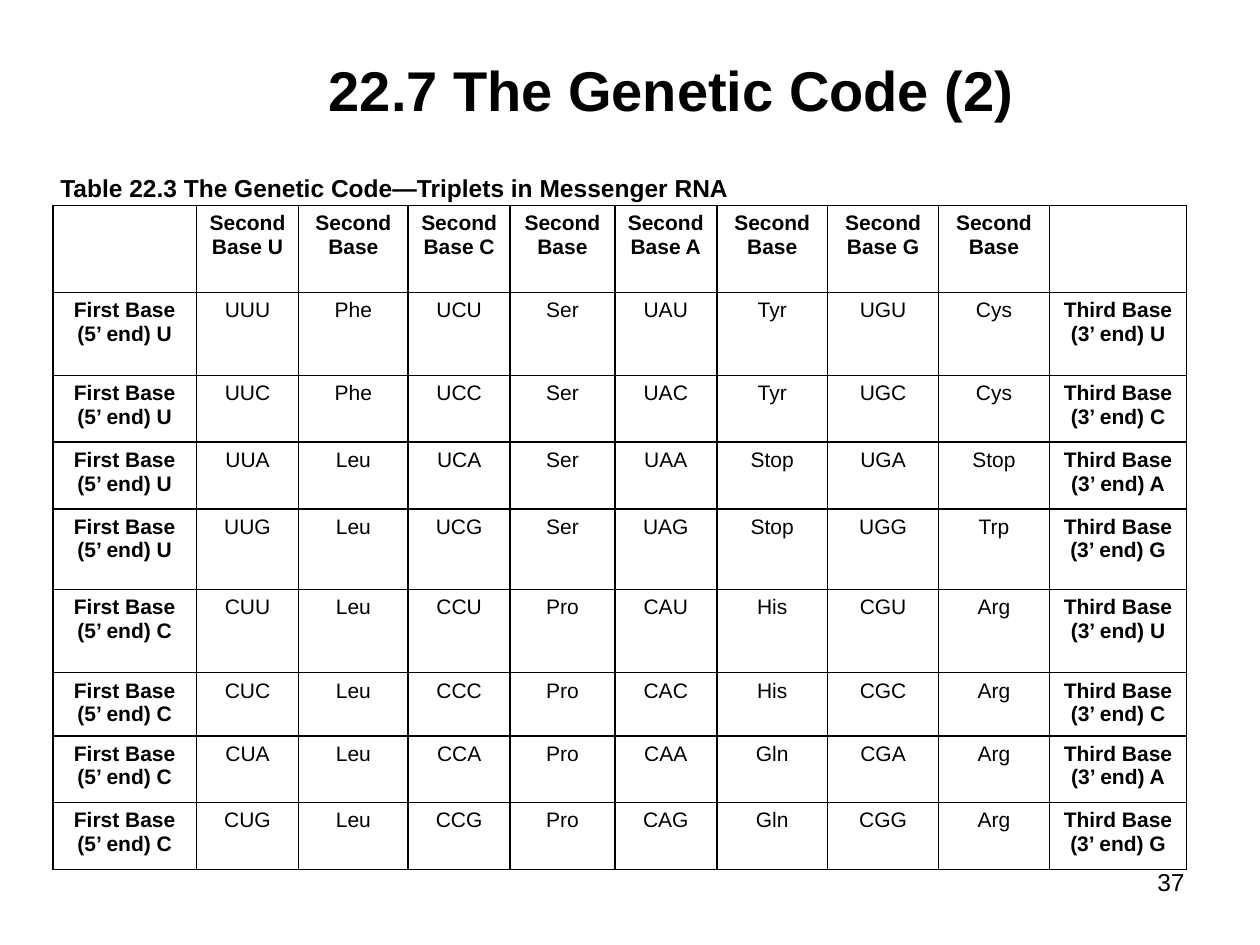
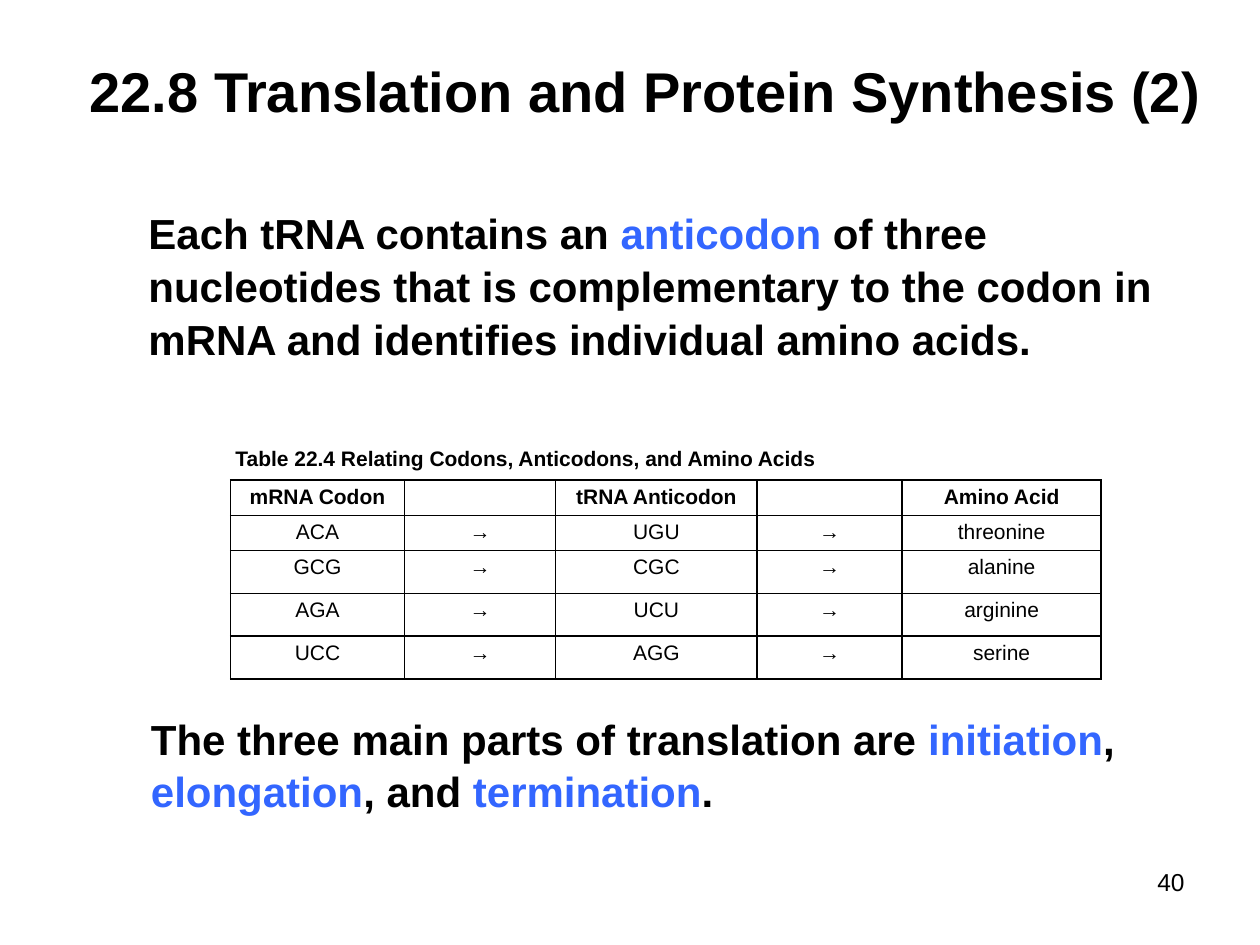
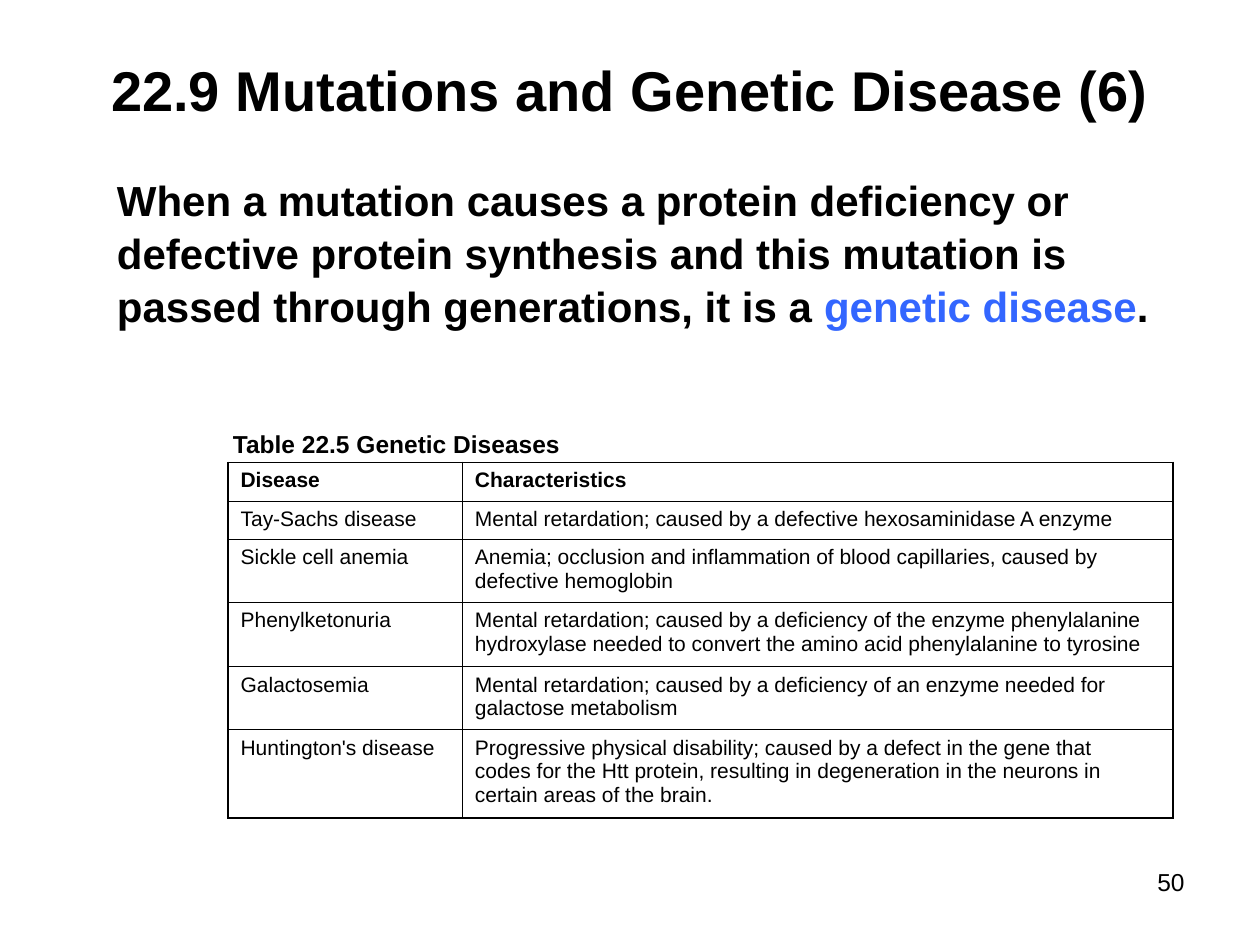
from lxml.etree import SubElement
from pptx import Presentation
from pptx.dml.color import RGBColor
from pptx.enum.text import MSO_ANCHOR as Anchor, PP_ALIGN as Align
from pptx.oxml.ns import qn
from pptx.util import Inches, Pt

FONT = "Arial"
COLORS = {"text": "000000", "term": "3366FF", "border": "000000", "page": "FFFFFF"}
BASES = "UCAG"
# Amino acids by first base, then one row for each third base
AMINO_ACIDS = {
    "U": ["Phe Ser Tyr Cys", "Phe Ser Tyr Cys", "Leu Ser Stop Stop", "Leu Ser Stop Trp"],
    "C": ["Leu Pro His Arg", "Leu Pro His Arg", "Leu Pro Gln Arg", "Leu Pro Gln Arg"],
}
ANTICODONS = [
    ("ACA", "UGU", "threonine"),
    ("GCG", "CGC", "alanine"),
    ("AGA", "UCU", "arginine"),
    ("UCC", "AGG", "serine"),
]
DISEASES = [
    ("Disease", "Characteristics"),
    ("Tay-Sachs disease",
     "Mental retardation; caused by a defective hexosaminidase A enzyme"),
    ("Sickle cell anemia",
     "Anemia; occlusion and inflammation of blood capillaries, caused by\n"
     "defective hemoglobin"),
    ("Phenylketonuria",
     "Mental retardation; caused by a deficiency of the enzyme phenylalanine\n"
     "hydroxylase needed to convert the amino acid phenylalanine to tyrosine"),
    ("Galactosemia",
     "Mental retardation; caused by a deficiency of an enzyme needed for\n"
     "galactose metabolism"),
    ("Huntington's disease",
     "Progressive physical disability; caused by a defect in the gene that\n"
     "codes for the Htt protein, resulting in degeneration in the neurons in\n"
     "certain areas of the brain."),
]


def style_span(span, size, bold=False, color="text"):
    span.font.name = FONT
    span.font.size = Pt(size)
    span.font.bold = bold
    span.font.color.rgb = RGBColor.from_string(COLORS[color])


def add_text(page, place, text, size, bold=True, align=Align.LEFT,
             anchor=Anchor.TOP, line_spacing=None):
    """Add a text box; words between asterisks take the term colour."""
    box = page.shapes.add_textbox(*map(Inches, place))
    frame = box.text_frame
    frame.word_wrap = True
    frame.vertical_anchor = anchor
    para = frame.paragraphs[0]
    para.alignment = align
    para.line_spacing = line_spacing
    for index, part in enumerate(text.split("*")):
        span = para.add_run()
        span.text = part
        style_span(span, size, bold, "term" if index % 2 else "text")


def add_body(page, place, text):
    add_text(page, place, text, 24, line_spacing=1.05)


def add_page(deck, title, title_place, number):
    page = deck.slides.add_slide(deck.slide_layouts[6])
    page.background.fill.solid()
    page.background.fill.fore_color.rgb = RGBColor.from_string(COLORS["page"])
    add_text(page, (7.5, 6.83, 2, 0.34), str(number), 14, bold=False, align=Align.RIGHT)
    add_text(page, title_place, title, 32, align=Align.CENTER, anchor=Anchor.MIDDLE)
    return page


def add_borders(cell):
    properties = cell._tc.get_or_add_tcPr()
    for side in ("a:lnL", "a:lnR", "a:lnT", "a:lnB"):
        line = SubElement(properties, qn(side), w=str(Pt(1)))
        fill = SubElement(line, qn("a:solidFill"))
        SubElement(fill, qn("a:srgbClr"), val=COLORS["border"])


def fill_cell(cell, text, bold, align, margin):
    add_borders(cell)
    cell.fill.background()
    cell.margin_top = cell.margin_bottom = Inches(margin)
    cell.text_frame.text = text
    for para in cell.text_frame.paragraphs:
        para.alignment = align
        for span in para.runs:
            style_span(span, 12, bold)
        if not para.runs:
            # keeps an empty cell from growing its row
            SubElement(para._p, qn("a:endParaRPr"), sz="1200")


def add_grid(page, left, top, widths, heights, rows, bold_columns=(),
             align=Align.CENTER, margin=0.05):
    """Add a bordered table whose first row and bold_columns are bold."""
    frame = page.shapes.add_table(len(rows), len(widths), Inches(left), Inches(top),
                                  Inches(sum(widths)), Inches(sum(heights)))
    table = frame.table
    table.first_row = table.horz_banding = False
    for column, width in zip(table.columns, widths):
        column.width = Inches(width)
    for row, height in zip(table.rows, heights):
        row.height = Inches(height)
    for r, texts in enumerate(rows):
        for c, text in enumerate(texts):
            bold = r == 0 or c in bold_columns
            fill_cell(table.cell(r, c), text, bold, align, margin)


def codon_rows():
    header = [""]
    for second in BASES:
        header += [f"Second Base {second}", "Second Base"]
    rows = [header + [""]]
    for first, acid_rows in AMINO_ACIDS.items():
        for third, acids in zip(BASES, acid_rows):
            row = [f"First Base\n(5’ end) {first}"]
            for second, acid in zip(BASES, acids.split()):
                row += [first + second + third, acid]
            rows.append(row + [f"Third Base\n(3’ end) {third}"])
    return rows


def add_genetic_code(deck):
    page = add_page(deck, "22.7 The Genetic Code (2)", (2.31, 0.42, 6.04, 0.58), 37)
    add_text(page, (0.38, 1.32, 5.59, 0.31),
             "Table 22.3 The Genetic Code—Triplets in Messenger RNA", 14)
    add_grid(page, 0.42, 1.63,
             [1.14, 0.81, 0.87, 0.81, 0.83, 0.81, 0.88, 0.88, 0.88, 1.09],
             [0.69, 0.66, 0.53, 0.53, 0.64, 0.66, 0.48, 0.53, 0.53],
             codon_rows(), bold_columns=(0, 9))


def add_translation(deck):
    page = add_page(deck, "22.8 Translation and Protein Synthesis (2)",
                    (0.5, 0.36, 9.25, 0.71), 40)
    add_body(page, (1.08, 1.58, 8.18, 1.4),
             "Each tRNA contains an *anticodon* of three nucleotides that is "
             "complementary to the codon in mRNA and identifies individual amino acids.")
    add_text(page, (1.77, 3.49, 4.9, 0.25),
             "Table 22.4 Relating Codons, Anticodons, and Amino Acids", 12)
    rows = [("mRNA Codon", "", "tRNA Anticodon", "", "Amino Acid")]
    rows += [(codon, "→", anticodon, "→", acid) for codon, anticodon, acid in ANTICODONS]
    add_grid(page, 1.83, 3.81, [1.38, 1.2, 1.6, 1.15, 1.58],
             [0.27, 0.27, 0.34, 0.34, 0.34], rows, margin=0.04)
    add_body(page, (1.1, 5.59, 7.9, 0.86),
             "The three main parts of translation are *initiation*, "
             "*elongation*, and *termination*.")


def add_genetic_disease(deck):
    page = add_page(deck, "22.9 Mutations and Genetic Disease (6)",
                    (0.5, 0.39, 9, 0.64), 50)
    add_body(page, (0.83, 1.32, 8.42, 1.26),
             "When a mutation causes a protein deficiency or defective protein "
             "synthesis and this mutation is passed through generations, it is a "
             "*genetic disease*.")
    add_text(page, (1.75, 3.36, 2.83, 0.3), "Table 22.5 Genetic Diseases", 14)
    add_grid(page, 1.81, 3.67, [1.86, 5.64], [0.31, 0.28, 0.48, 0.51, 0.48, 0.66],
             DISEASES, align=Align.LEFT)


def main():
    deck = Presentation()
    deck.slide_width = Inches(10)
    deck.slide_height = Inches(7.5)
    add_genetic_code(deck)
    add_translation(deck)
    add_genetic_disease(deck)
    deck.save("out.pptx")


if __name__ == "__main__":
    main()
